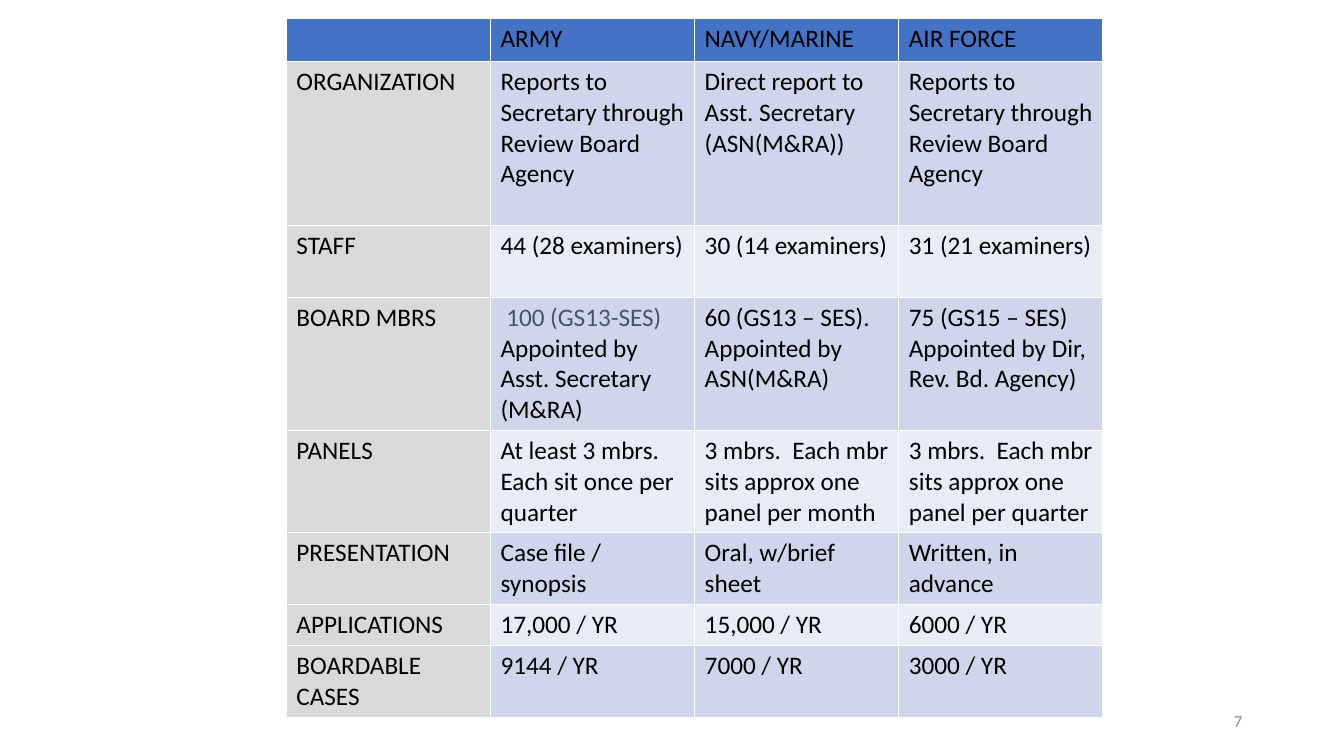
"""Build a slide with a table comparing the service review boards."""
from lxml.etree import SubElement
from pptx import Presentation
from pptx.dml.color import RGBColor
from pptx.enum.text import MSO_ANCHOR, PP_ALIGN
from pptx.oxml.ns import qn
from pptx.util import Inches, Pt

ROWS = [
    ("", "ARMY", "NAVY/MARINE", "AIR FORCE"),
    ("ORGANIZATION",
     "Reports to Secretary through Review Board Agency",
     "Direct report to Asst. Secretary (ASN(M&RA))",
     "Reports to Secretary through Review Board Agency"),
    ("STAFF", "44 (28 examiners)", "30 (14 examiners)", "31 (21 examiners)"),
    ("BOARD MBRS",
     " 100 (GS13-SES)\nAppointed by Asst. Secretary (M&RA)",
     "60 (GS13 – SES).  Appointed by ASN(M&RA)",
     "75 (GS15 – SES)\nAppointed by Dir, Rev. Bd. Agency)"),
    ("PANELS",
     "At least 3 mbrs.  Each sit once per quarter",
     "3 mbrs.  Each mbr sits approx one panel per month",
     "3 mbrs.  Each mbr sits approx one panel per quarter"),
    ("PRESENTATION", "Case file / synopsis", "Oral, w/brief sheet",
     "Written, in advance"),
    ("APPLICATIONS", "17,000 / YR", "15,000 / YR", "6000 / YR"),
    ("BOARDABLE CASES", "9144 / YR", "7000 / YR", "3000 / YR"),
]
ROW_HEIGHTS = [0.43, 1.63, 0.71, 1.32, 1.01, 0.71, 0.41, 0.71]
TABLE_WIDTH = 8.1
SLIDE_NUMBER = "7"

FONT = "Calibri"
BLACK = RGBColor(0x00, 0x00, 0x00)
WHITE = RGBColor(0xFF, 0xFF, 0xFF)
BLUE = RGBColor(0x44, 0x72, 0xC4)
GRAY = RGBColor(0xD9, 0xD9, 0xD9)
BAND_DARK = RGBColor(0xCF, 0xD5, 0xEA)
BAND_LIGHT = RGBColor(0xE9, 0xEB, 0xF5)
SLATE = RGBColor(0x44, 0x54, 0x6A)
NUMBER_GRAY = RGBColor(0x8C, 0x8C, 0x8C)


def format_font(font, size, color):
    font.name = FONT
    font.size = Pt(size)
    font.bold = False
    font.color.rgb = color


def add_borders(cell):
    tcPr = cell._tc.get_or_add_tcPr()
    for side in ("lnL", "lnR", "lnT", "lnB"):
        ln = SubElement(tcPr, qn(f"a:{side}"), w=str(Pt(1)))
        fill = SubElement(ln, qn("a:solidFill"))
        SubElement(fill, qn("a:srgbClr"), val=str(WHITE))


def cell_fill(row, col):
    if row == 0:
        return BLUE
    if col == 0:
        return GRAY
    return BAND_DARK if row % 2 else BAND_LIGHT


def add_board_table(s):
    n_cols = len(ROWS[0])
    table = s.shapes.add_table(
        len(ROWS), n_cols, Inches(2.84), Inches(0.18),
        Inches(TABLE_WIDTH), Inches(sum(ROW_HEIGHTS))).table
    for col in table.columns:
        col.width = Inches(TABLE_WIDTH / n_cols)
    for i, (values, height) in enumerate(zip(ROWS, ROW_HEIGHTS)):
        table.rows[i].height = Inches(height)
        for j, value in enumerate(values):
            cell = table.cell(i, j)
            add_borders(cell)
            cell.fill.solid()
            cell.fill.fore_color.rgb = cell_fill(i, j)
            cell.text_frame.text = value
            for p in cell.text_frame.paragraphs:
                for r in p.runs:
                    format_font(r.font, 18, BLACK)
    army_members = table.cell(3, 1).text_frame.paragraphs[0]
    army_members.runs[0].font.color.rgb = SLATE


def add_slide_number(s):
    tf = s.shapes.add_textbox(
        Inches(9.42), Inches(6.95), Inches(3), Inches(0.4)).text_frame
    tf.word_wrap = True
    tf.vertical_anchor = MSO_ANCHOR.MIDDLE
    tf.text = SLIDE_NUMBER
    p = tf.paragraphs[0]
    p.alignment = PP_ALIGN.RIGHT
    format_font(p.runs[0].font, 12, NUMBER_GRAY)


def main():
    prs = Presentation()
    prs.slide_width, prs.slide_height = Inches(13.33), Inches(7.5)
    s = prs.slides.add_slide(prs.slide_layouts[6])
    add_board_table(s)
    add_slide_number(s)
    prs.save("out.pptx")


if __name__ == "__main__":
    main()
